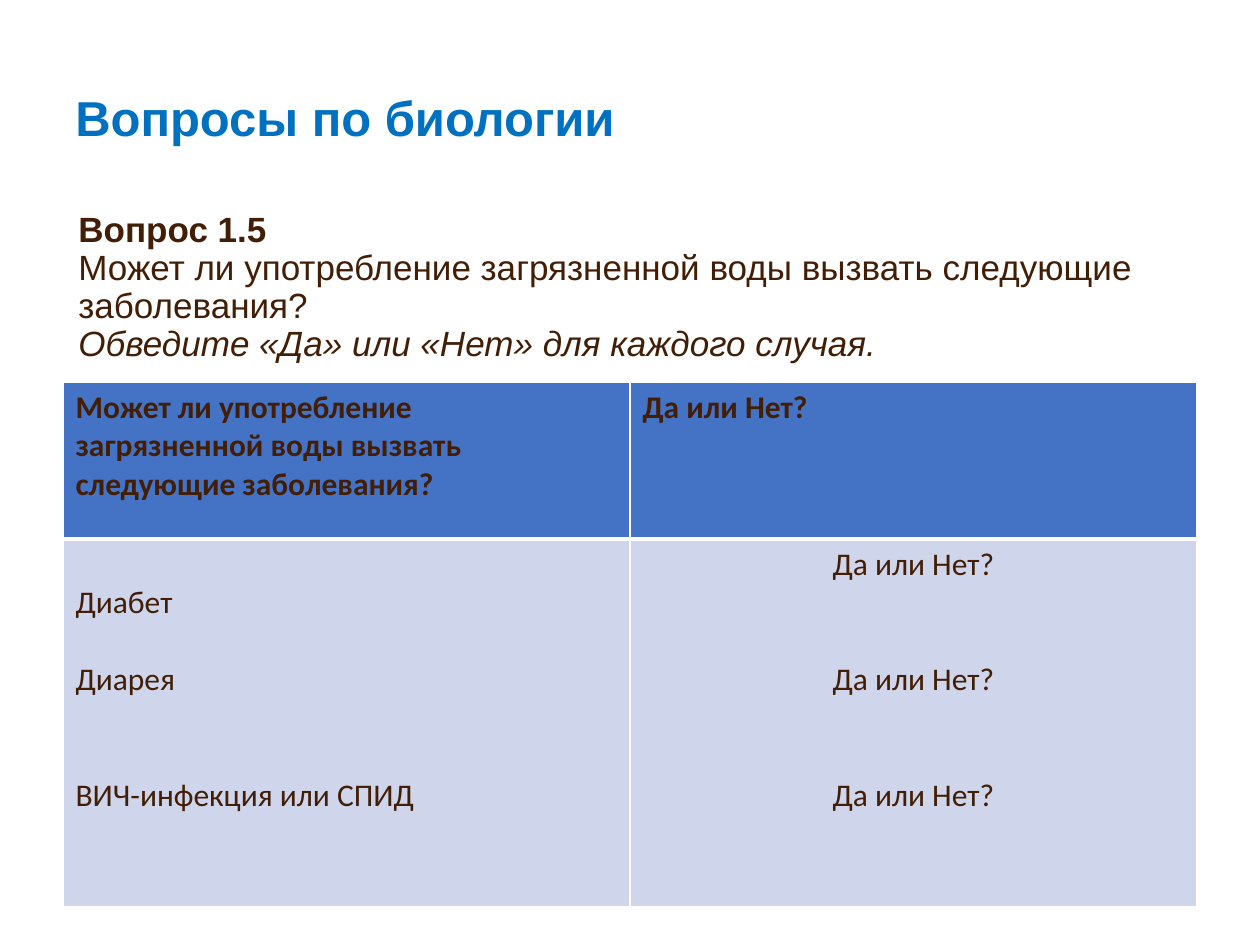
import pptx
import pptx.dml.color
import pptx.enum.text
import pptx.oxml
import pptx.oxml.ns
import pptx.util

PX = 914400 // 126
BROWN, BLUE, WHITE = "421E06", "0070C0", "FFFFFF"
LEFT = pptx.enum.text.PP_ALIGN.LEFT
CENTER = pptx.enum.text.PP_ALIGN.CENTER
LINE = 22  # points, one line of table text

TITLE = "Вопросы по биологии"
QUESTION = [
    ("Вопрос 1.5", {"bold": True}),
    ("Может ли употребление загрязненной воды вызвать следующие", {}),
    ("заболевания?", {}),
    ("Обведите «Да» или «Нет» для каждого случая.", {"italic": True}),
]
ANSWER = "Да или Нет?"
# Each cell: alignment, then (text, empty lines above it)
ROWS = [
    {"height": 157, "fill": "4472C4", "bold": True, "borders": {"T": 1, "B": 3},
     "cells": [
         (LEFT, [("Может ли употребление", 0), ("загрязненной воды вызвать", 0),
                 ("следующие заболевания?", 0)]),
         (LEFT, [(ANSWER, 0)])]},
    {"height": 368, "fill": "CFD5EA", "bold": False, "borders": {"T": 3, "B": 1},
     "cells": [
         (LEFT, [("Диабет", 1), ("Диарея", 1), ("ВИЧ-инфекция или СПИД", 2)]),
         (CENTER, [(ANSWER, 0), (ANSWER, 2), (ANSWER, 2)])]},
]
TITLE_BOX = (63, 38, 1134, 158)
QUESTION_BOX = (66, 195, 1134, 186)
TABLE_BOX = (63, 382, 1134, 525)


def px(*values):
    return [pptx.util.Emu(v * PX) for v in values]


def rgb(color):
    return pptx.dml.color.RGBColor.from_string(color)


def add_run(p, text, color, size, **fmt):
    r = p.add_run()
    r.text = text
    r.font.color.rgb = rgb(color)
    for name, value in {"size": pptx.util.Pt(size), "name": "Arial", **fmt}.items():
        setattr(r.font, name, value)


def add_text_box(slide, box):
    tf = slide.shapes.add_textbox(*px(*box)).text_frame
    tf.word_wrap = True
    tf.vertical_anchor = pptx.enum.text.MSO_ANCHOR.MIDDLE
    return tf.paragraphs[0]


def set_borders(cell, widths):
    for side in "LRTB":
        width = pptx.util.Pt(widths.get(side, 1))
        cell._tc.get_or_add_tcPr().append(pptx.oxml.parse_xml(
            f'<a:ln{side} {pptx.oxml.ns.nsdecls("a")} w="{width}"><a:solidFill>'
            f'<a:srgbClr val="{WHITE}"/></a:solidFill></a:ln{side}>'))


def fill_cell(cell, row, align, lines):
    set_borders(cell, row["borders"])
    cell.fill.solid()
    cell.fill.fore_color.rgb = rgb(row["fill"])
    tf = cell.text_frame
    for i, (text, gap) in enumerate(lines):
        p = tf.add_paragraph() if i else tf.paragraphs[0]
        p.alignment = align
        if i:
            p.space_before = pptx.util.Pt(gap * LINE)
        else:
            cell.margin_top = pptx.util.Inches(0.05) + pptx.util.Pt(gap * LINE)
        add_run(p, text, BROWN, 18, name="Calibri", bold=row["bold"])


def add_answer_table(slide):
    table = slide.shapes.add_table(len(ROWS), 2, *px(*TABLE_BOX)).table
    table.horz_banding = False
    for r, row in enumerate(ROWS):
        table.rows[r].height = px(row["height"])[0]
        for c, (align, lines) in enumerate(row["cells"]):
            fill_cell(table.cell(r, c), row, align, lines)


def main():
    prs = pptx.Presentation()
    prs.slide_width, prs.slide_height = pptx.util.Inches(10), pptx.util.Inches(7.5)
    slide = prs.slides.add_slide(prs.slide_layouts[6])

    p = add_text_box(slide, QUESTION_BOX)
    p.line_spacing = 0.9
    for i, (text, fmt) in enumerate(QUESTION):
        if i:
            p.add_line_break()
        add_run(p, text, BROWN, 20, **fmt)

    add_answer_table(slide)
    add_run(add_text_box(slide, TITLE_BOX), TITLE, BLUE, 28, bold=True)
    prs.save("out.pptx")


if __name__ == "__main__":
    main()
